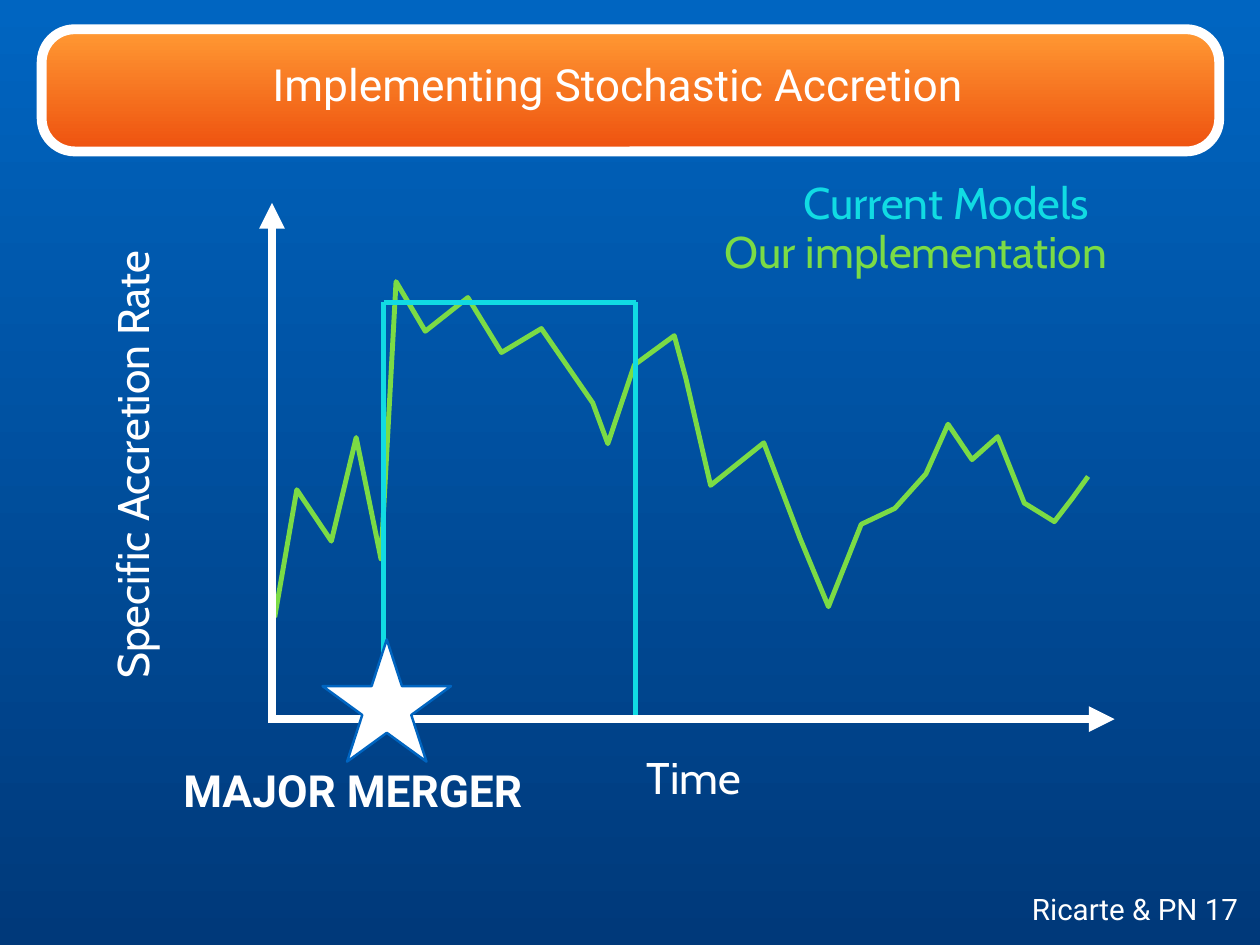
"""Build the slide on stochastic accretion with its sketched accretion history."""
from lxml import etree
from pptx import Presentation
from pptx import util as u
from pptx.dml.color import RGBColor
from pptx.enum import shapes, text
from pptx.oxml import ns

PX = 9144
WHITE = RGBColor(0xFF, 0xFF, 0xFF)
SKY = RGBColor(0x00, 0x65, 0xC1)
NAVY = RGBColor(0x00, 0x39, 0x7A)
AMBER = RGBColor(0xFF, 0x99, 0x33)
ORANGE = RGBColor(0xEE, 0x51, 0x0F)
CYAN = RGBColor(0x11, 0xDB, 0xE3)
GREEN = RGBColor(0x7B, 0xDB, 0x45)
LEFT, CENTER = text.PP_ALIGN.LEFT, text.PP_ALIGN.CENTER

ACCRETION = [
    (310, 697), (335, 553), (374, 611), (402, 494), (430, 631), (447, 318),
    (480, 374), (528, 336), (566, 398), (611, 371), (669, 455), (686, 501),
    (716, 412), (761, 379), (774, 427), (802, 548), (862, 500), (903, 608),
    (935, 685), (972, 592), (1010, 574), (1045, 535), (1070, 479), (1097, 519),
    (1126, 493), (1156, 568), (1190, 589), (1210, 563), (1228, 538),
]
BURST = [
    ((433, 811), (433, 341)),
    ((717, 811), (717, 341)),
    ((433, 342), (718, 342)),
]
AXES = [
    ((307, 816), (307, 229)),
    ((305, 812), (1258, 812)),
]
LABELS = [
    ("Time", (724, 842, 122, 71), "Cabin", 36, WHITE, {}),
    ("Specific Accretion Rate", (-115, 473, 527, 71), "Cabin", 36, WHITE,
     {"rotation": 270}),
    ("Current Models", (901, 192, 354, 71), "Cabin", 36, CYAN, {}),
    ("Our implementation", (812, 248, 460, 71), "Cabin", 36, GREEN, {}),
    ("MAJOR MERGER", (201, 856, 426, 71), "Roboto", 36, WHITE, {"bold": True}),
    ("Implementing Stochastic Accretion", (277, 59, 840, 71), "Roboto", 36, WHITE,
     {"align": CENTER}),
    ("Ricarte & PN 17", (1156, 1000, 250, 51), "Roboto", 24, WHITE,
     {"align": CENTER}),
]


def px(*lengths):
    """Turn px lengths into EMU."""
    return [u.Emu(length * PX) for length in lengths]


def apply(target, values):
    """Set every attribute named in values on the target."""
    for name, value in values.items():
        setattr(target, name, value)


def set_line(item, color, width):
    """Give a shape or connector a solid line."""
    item.line.color.rgb = color
    item.line.width = u.Pt(width)


def set_gradient(fill, top, bottom):
    """Fill with a gradient that runs downwards."""
    fill.gradient()
    fill.gradient_angle = 270
    for stop, color, position in zip(fill.gradient_stops, (top, bottom), (0, 1)):
        stop.color.rgb = color
        stop.position = position


def add_outlined(slide, kind, box, color, width):
    """Add a preset shape without shadow and with a solid outline."""
    shape = slide.shapes.add_shape(kind, *px(*box))
    shape.shadow.inherit = False
    set_line(shape, color, width)
    return shape


def add_line(container, start, end, color, width, arrow=False):
    """Add a straight line, with an arrowhead at its end if asked."""
    connector = container.shapes.add_connector(
        shapes.MSO_CONNECTOR.STRAIGHT, *px(*start, *end))
    set_line(connector, color, width)
    if arrow:
        etree.SubElement(connector.line._get_or_add_ln(), ns.qn("a:tailEnd"),
                         type="triangle")
    etree.SubElement(connector._element.spPr, ns.qn("a:effectLst"))


def add_curve(slide, points, color, width):
    """Add an open line through the points."""
    builder = slide.shapes.build_freeform(*points[0], scale=PX)
    builder.add_line_segments(points[1:], close=False)
    shape = builder.convert_to_shape()
    shape.shadow.inherit = False
    shape.fill.background()
    set_line(shape, color, width)


def add_label(slide, words, box, font, size, color, rotation=0, bold=False, align=LEFT):
    """Add a text box that holds one line of text."""
    shape = slide.shapes.add_textbox(*px(*box))
    shape.rotation = rotation
    margins = {f"margin_{side}": px(6)[0] for side in ("left", "top", "right", "bottom")}
    apply(shape.text_frame, {
        "word_wrap": True, "vertical_anchor": text.MSO_ANCHOR.MIDDLE, **margins})
    paragraph = shape.text_frame.paragraphs[0]
    paragraph.alignment = align
    run = paragraph.add_run()
    run.text = words
    apply(run.font, {"name": font, "size": u.Pt(size), "bold": bold})
    run.font.color.rgb = color


def main():
    """Draw the slide and save it."""
    presentation = Presentation()
    presentation.slide_width, presentation.slide_height = px(1422, 1067)
    slide = presentation.slides.add_slide(presentation.slide_layouts[6])
    set_gradient(slide.background.fill, SKY, NAVY)

    banner = add_outlined(slide, shapes.MSO_SHAPE.ROUNDED_RECTANGLE,
                          (47, 33, 1329, 138), WHITE, 8)
    banner.adjustments[0] = 0.27
    set_gradient(banner.fill, AMBER, ORANGE)

    add_curve(slide, ACCRETION, GREEN, 4)
    burst_group = slide.shapes.add_group_shape()
    for start, end in BURST:
        add_line(burst_group, start, end, CYAN, 4)
    for start, end in AXES:
        add_line(slide, start, end, WHITE, 7, arrow=True)

    merger_star = add_outlined(slide, shapes.MSO_SHAPE.STAR_5_POINT,
                               (364, 722, 145, 138), SKY, 2)
    merger_star.fill.solid()
    merger_star.fill.fore_color.rgb = WHITE

    for words, box, font, size, color, options in LABELS:
        add_label(slide, words, box, font, size, color, **options)
    presentation.save("out.pptx")


if __name__ == "__main__":
    main()
